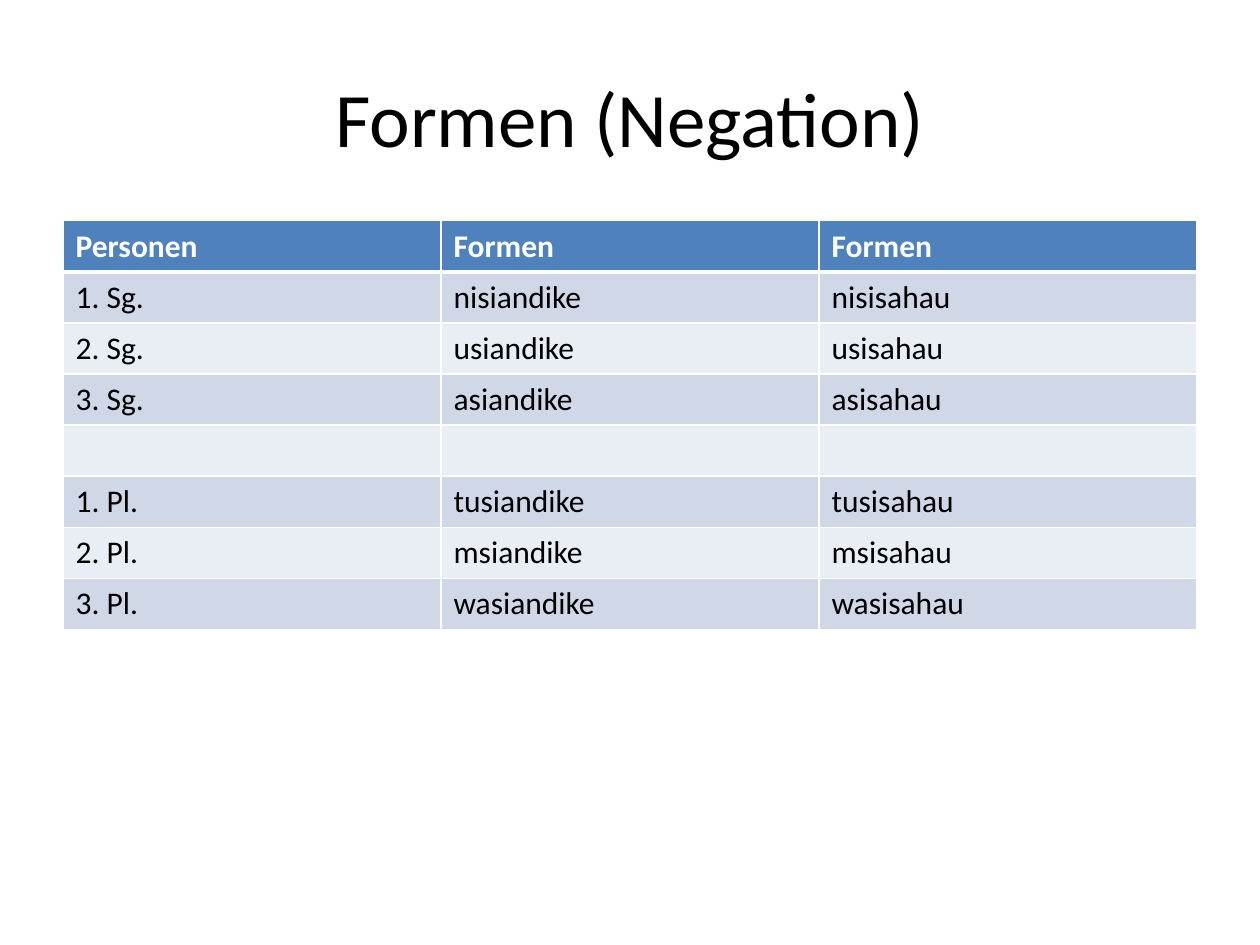
from dataclasses import dataclass

from lxml.etree import SubElement
from pptx import Presentation
from pptx.dml.color import RGBColor as RGB
from pptx.enum.text import MSO_ANCHOR as ANCHOR, PP_ALIGN as ALIGN
from pptx.oxml.ns import qn
from pptx.util import Cm, Pt


@dataclass(frozen=True)
class Theme:
    font: str = "Calibri"
    text: str = "000000"
    light: str = "FFFFFF"
    header: str = "4F81BD"
    bands: tuple = ("D0D8E8", "E9EDF4")
    title_size: int = 44
    cell_size: int = 18
    thin: int = 1
    thick: int = 3


THEME = Theme()
MARGIN, WIDTH = Cm(1.27), Cm(22.86)
ROW_HEIGHT = Cm(1.03)

HEADER = ("Personen", "Formen", "Formen")
PERSONS = ("1. Sg.", "2. Sg.", "3. Sg.", "", "1. Pl.", "2. Pl.", "3. Pl.")
PREFIXES = ("nisi", "usi", "asi", "", "tusi", "msi", "wasi")
STEMS = ("andike", "sahau")


def write(tf, text, size=THEME.cell_size, color=THEME.text, bold=False, align=ALIGN.LEFT):
    p = tf.paragraphs[0]
    p.alignment = align
    p.font.size = Pt(size)
    if not text:
        return
    r = p.add_run()
    r.text = text
    r.font.name = THEME.font
    r.font.size = Pt(size)
    r.font.bold = bold
    r.font.color.rgb = RGB.from_string(color)


def add_title(slide, text):
    sp = slide.shapes.title
    sp.left, sp.top, sp.width, sp.height = MARGIN, Cm(0.76), WIDTH, Cm(3.18)
    sp.text_frame.vertical_anchor = ANCHOR.MIDDLE
    write(sp.text_frame, text, size=THEME.title_size, align=ALIGN.CENTER)


def set_borders(cell, top, bottom):
    tc_pr = cell._tc.get_or_add_tcPr()
    for side, width in (("L", THEME.thin), ("R", THEME.thin), ("T", top), ("B", bottom)):
        ln = SubElement(tc_pr, qn(f"a:ln{side}"), w=str(Pt(width)))
        fill = SubElement(ln, qn("a:solidFill"))
        SubElement(fill, qn("a:srgbClr"), val=THEME.light)


def fill_cell(cell, text, row):
    is_header = row == 0
    set_borders(
        cell,
        top=THEME.thick if row == 1 else THEME.thin,
        bottom=THEME.thick if is_header else THEME.thin,
    )
    cell.fill.solid()
    color = THEME.header if is_header else THEME.bands[(row - 1) % 2]
    cell.fill.fore_color.rgb = RGB.from_string(color)
    write(cell.text_frame, text, color=THEME.light if is_header else THEME.text, bold=is_header)


def add_forms_table(slide, rows):
    frame = slide.shapes.add_table(
        len(rows), len(rows[0]), MARGIN, Cm(4.45), WIDTH, ROW_HEIGHT * len(rows)
    )
    for i, row in enumerate(rows):
        for j, text in enumerate(row):
            fill_cell(frame.table.cell(i, j), text, i)


def conjugate(person, prefix):
    return (person, *(prefix + stem if prefix else "" for stem in STEMS))


def main():
    prs = Presentation()
    prs.slide_width, prs.slide_height = Cm(25.4), Cm(19.05)
    slide = prs.slides.add_slide(prs.slide_layouts[5])
    add_title(slide, "Formen (Negation)")
    add_forms_table(slide, [HEADER, *map(conjugate, PERSONS, PREFIXES)])
    prs.save("out.pptx")


if __name__ == "__main__":
    main()
